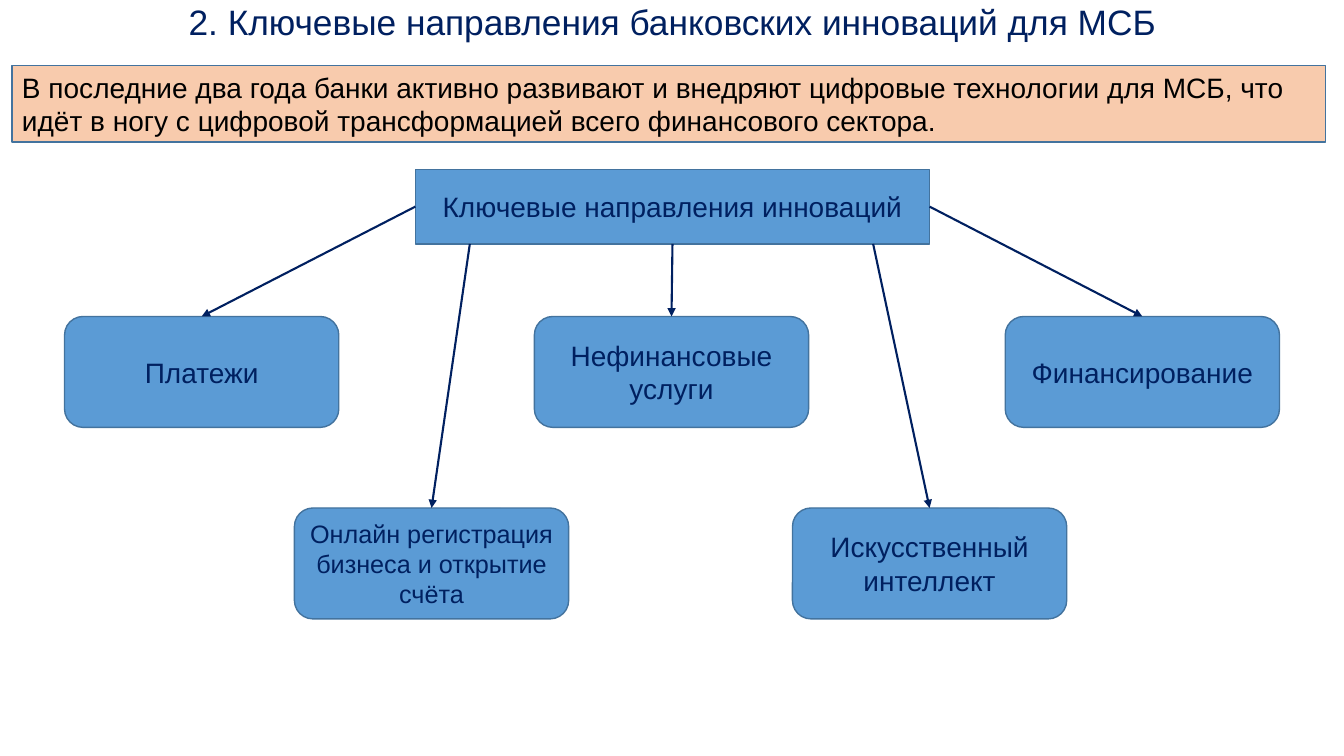
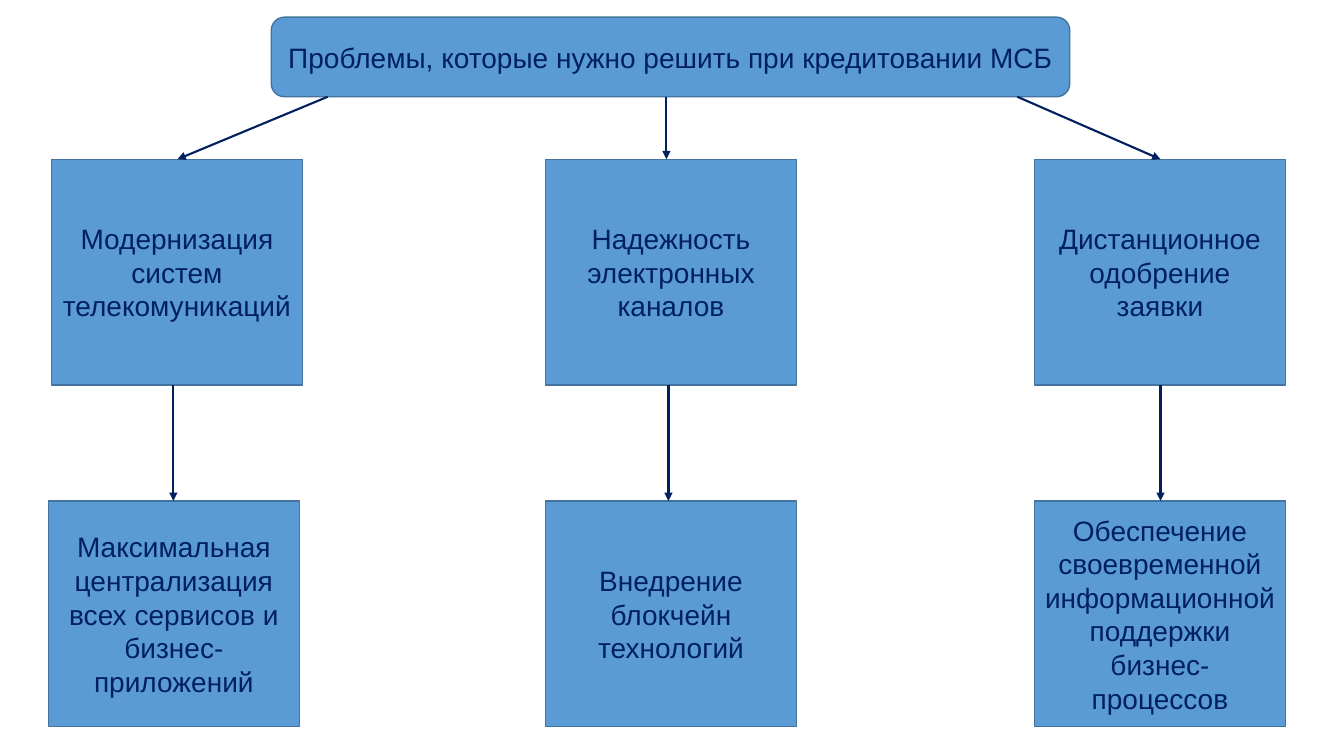
from dataclasses import dataclass

from lxml.etree import SubElement
from pptx import Presentation
from pptx.dml.color import RGBColor
from pptx.enum.shapes import MSO_CONNECTOR, MSO_SHAPE as SHAPE
from pptx.enum.text import MSO_ANCHOR as ANCHOR, PP_ALIGN as ALIGN
from pptx.oxml.ns import qn
from pptx.slide import Slide
from pptx.text.text import TextFrame
from pptx.util import Inches, Pt

FONT = "Arial"
NAVY, BLUE, EDGE, PEACH, BLACK = "002060", "5B9BD5", "43739E", "F8CBAD", "000000"

Point = tuple[float, float]


@dataclass(frozen=True)
class Box:
    text: str
    left: float
    top: float
    width: float
    height: float
    shape: SHAPE = SHAPE.RECTANGLE
    fill: str = BLUE
    color: str = NAVY
    size: float = 20
    align: ALIGN = ALIGN.CENTER

    @property
    def bottom(self) -> float:
        return self.top + self.height

    @property
    def top_center(self) -> Point:
        return self.left + self.width / 2, self.top


@dataclass(frozen=True)
class Branch:
    text: str
    left: float
    top: float
    start: Point
    size: float = 20


@dataclass(frozen=True)
class Column:
    left: float
    lower_left: float
    arrow_x: float
    start_x: float
    tip_x: float
    problem: str
    solution: str


def rgb(value: str) -> RGBColor:
    return RGBColor.from_string(value)


def write(tf: TextFrame, text: str, size: float, color: str,
          align: ALIGN, anchor: ANCHOR = ANCHOR.MIDDLE) -> None:
    tf.word_wrap = True
    tf.vertical_anchor = anchor
    p = tf.paragraphs[0]
    p.text = text
    p.alignment = align
    p.font.name = FONT
    p.font.size = Pt(size)
    p.font.color.rgb = rgb(color)


def add_title(s: Slide, text: str) -> None:
    sp = s.shapes.add_textbox(Inches(0.92), Inches(0), Inches(11.5), Inches(0.84))
    write(sp.text_frame, text, 25.2, NAVY, ALIGN.CENTER, ANCHOR.TOP)
    sp.text_frame.paragraphs[0].line_spacing = 0.9


def add_box(s: Slide, box: Box) -> None:
    sp = s.shapes.add_shape(box.shape, Inches(box.left), Inches(box.top),
                            Inches(box.width), Inches(box.height))
    sp.shadow.inherit = False
    sp.fill.solid()
    sp.fill.fore_color.rgb = rgb(box.fill)
    sp.line.color.rgb = rgb(EDGE)
    sp.line.width = Pt(1)
    write(sp.text_frame, box.text, box.size, box.color, box.align)


def add_arrow(s: Slide, start: Point, end: Point) -> None:
    cx = s.shapes.add_connector(MSO_CONNECTOR.STRAIGHT,
                                *(Inches(v) for v in (*start, *end)))
    cx.line.color.rgb = rgb(NAVY)
    cx.line.width = Pt(1.5)
    SubElement(cx.line._get_or_add_ln(), qn("a:tailEnd"), type="triangle")
    SubElement(cx._element.spPr, qn("a:effectLst"))


def build_directions(s: Slide) -> None:
    add_title(s, "2. Ключевые направления банковских инноваций для МСБ")
    add_box(s, Box("В последние два года банки активно развивают и внедряют цифровые "
                   "технологии для МСБ, что идёт в ногу с цифровой трансформацией "
                   "всего финансового сектора.",
                   0.12, 0.65, 13.03, 0.76, fill=PEACH, color=BLACK, align=ALIGN.LEFT))
    root = Box("Ключевые направления инноваций", 4.12, 1.68, 5.1, 0.74)
    add_box(s, root)
    middle = root.top + root.height / 2
    upper, lower = 3.14, 5.04
    branches = [
        Branch("Платежи", 0.64, upper, (root.left, middle)),
        Branch("Онлайн регистрация бизнеса и открытие счёта", 2.92, lower,
               (4.66, root.bottom), 18),
        Branch("Нефинансовые услуги", 5.3, upper, (6.67, root.bottom)),
        Branch("Искусственный интеллект", 7.86, lower, (8.66, root.bottom)),
        Branch("Финансирование", 9.97, upper, (root.left + root.width, middle)),
    ]
    for b in branches:
        box = Box(b.text, b.left, b.top, 2.72, 1.1, SHAPE.ROUNDED_RECTANGLE, size=b.size)
        add_box(s, box)
        add_arrow(s, b.start, box.top_center)


def build_problems(s: Slide) -> None:
    root = Box("Проблемы, которые нужно решить при кредитовании МСБ",
               2.69, 0.17, 7.92, 0.79, SHAPE.ROUNDED_RECTANGLE)
    add_box(s, root)
    columns = [
        Column(0.51, 0.48, 1.72, 3.25, 1.76, "Модернизация систем телекомуникаций",
               "Максимальная централизация всех сервисов и бизнес-приложений"),
        Column(5.41, 5.41, 6.63, 6.61, 6.61, "Надежность электронных каналов",
               "Внедрение блокчейн технологий"),
        Column(10.26, 10.26, 11.51, 10.09, 11.51, "Дистанционное одобрение заявки",
               "Обеспечение своевременной информационной поддержки бизнес-процессов"),
    ]
    for c in columns:
        problem = Box(c.problem, c.left, 1.58, 2.49, 2.24)
        solution = Box(c.solution, c.lower_left, 4.97, 2.49, 2.24)
        add_box(s, problem)
        add_box(s, solution)
        add_arrow(s, (c.start_x, root.bottom), (c.tip_x, problem.top))
        add_arrow(s, (c.arrow_x, problem.bottom), (c.arrow_x, solution.top))


def main() -> None:
    prs = Presentation()
    prs.slide_width, prs.slide_height = Inches(13.33), Inches(7.5)
    for build in (build_directions, build_problems):
        build(prs.slides.add_slide(prs.slide_layouts[6]))
    prs.save("out.pptx")


if __name__ == "__main__":
    main()
